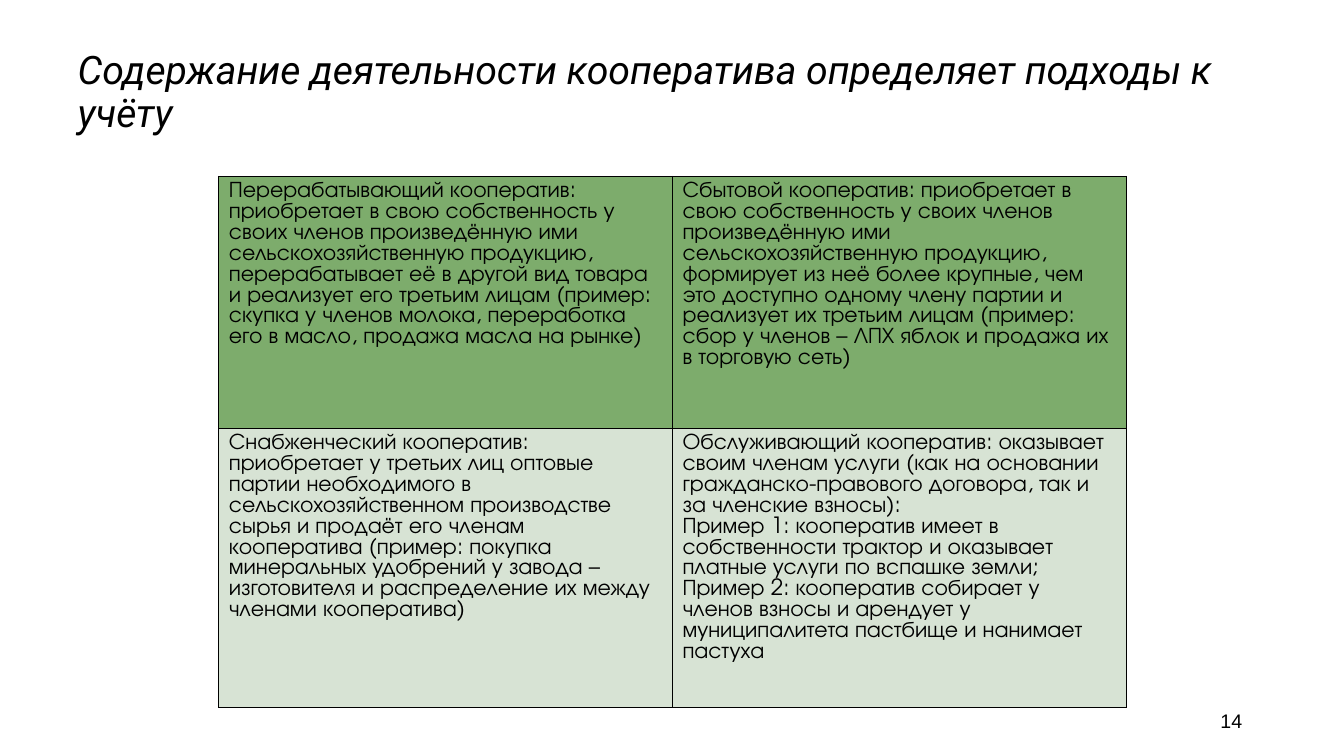
import pptx
import pptx.util
import pptx.dml.color
import pptx.enum.text
import pptx.oxml
import pptx.oxml.ns

Inches = pptx.util.Inches
Pt = pptx.util.Pt
Align = pptx.enum.text.PP_ALIGN
Anchor = pptx.enum.text.MSO_ANCHOR

COLORS = {"ink": "000000", "dark": "7DAC6C", "light": "D7E3D4"}


def style(para, face, size):
    para.font.name = face
    para.font.size = Pt(size)
    para.font.color.rgb = pptx.dml.color.RGBColor.from_string(COLORS["ink"])


def paint(cell, color):
    cell.fill.solid()
    cell.fill.fore_color.rgb = pptx.dml.color.RGBColor.from_string(color)
    props = cell._tc.get_or_add_tcPr()
    for spot, side in enumerate(("lnL", "lnR", "lnT", "lnB")):
        line = pptx.oxml.parse_xml(
            f'<a:{side} {pptx.oxml.ns.nsdecls("a")} w="12700"><a:solidFill>'
            f'<a:srgbClr val="{COLORS["ink"]}"/></a:solidFill></a:{side}>'
        )
        props.insert(spot, line)


deck = pptx.Presentation()
deck.slide_width = Inches(13.33)
deck.slide_height = Inches(7.5)
slide = deck.slides.add_slide(deck.slide_layouts[5])

title = slide.shapes.title
title.left, title.top = Inches(0.67), Inches(0.3)
title.width, title.height = Inches(12), Inches(1.25)
title.text_frame.text = "Содержание деятельности кооператива определяет подходы к учёту"
title.text_frame.vertical_anchor = Anchor.MIDDLE
head = title.text_frame.paragraphs[0]
head.alignment = Align.LEFT
head.line_spacing = 0.9
head.font.italic = True
style(head, "Roboto", 28)

rows = [
    ("dark", 2.5, [
        "Перерабатывающий кооператив: приобретает в свою собственность у своих членов "
        "произведённую ими сельскохозяйственную продукцию, перерабатывает её в другой вид "
        "товара и реализует его третьим лицам (пример: скупка у членов молока, переработка "
        "его в масло, продажа масла на рынке)",
        "Сбытовой кооператив: приобретает в свою собственность у своих членов произведённую "
        "ими сельскохозяйственную продукцию, формирует из неё более крупные, чем это доступно "
        "одному члену партии и реализует их третьим лицам (пример: сбор у членов – ЛПХ яблок "
        "и продажа их в торговую сеть)",
    ]),
    ("light", 2.77, [
        "Снабженческий кооператив: приобретает у третьих лиц оптовые партии необходимого в "
        "сельскохозяйственном производстве сырья и продаёт его членам кооператива (пример: "
        "покупка минеральных удобрений у завода – изготовителя и распределение их между "
        "членами кооператива)",
        "Обслуживающий кооператив: оказывает своим членам услуги (как на основании "
        "гражданско-правового договора, так и за членские взносы):\n"
        "Пример 1: кооператив имеет в собственности трактор и оказывает платные услуги по "
        "вспашке земли;\n"
        "Пример 2: кооператив собирает у членов взносы и арендует у муниципалитета пастбище "
        "и нанимает пастуха",
    ]),
]

frame = slide.shapes.add_table(2, 2, Inches(2.17), Inches(1.75), Inches(9), Inches(5.27))
table = frame.table
table.first_row = False
table.horz_banding = False
for column in table.columns:
    column.width = Inches(4.5)
for row, (shade, height, texts) in zip(table.rows, rows):
    row.height = Inches(height)
    for cell, text in zip(row.cells, texts):
        cell.text = text
        paint(cell, COLORS[shade])
        for para in cell.text_frame.paragraphs:
            style(para, "TeX Gyre Adventor", 16)

number = slide.shapes.add_textbox(Inches(9.42), Inches(6.95), Inches(3), Inches(0.4))
number.text_frame.word_wrap = True
number.text_frame.vertical_anchor = Anchor.MIDDLE
number.text_frame.text = "14"
page = number.text_frame.paragraphs[0]
page.alignment = Align.RIGHT
style(page, "Arial", 14)

deck.save("out.pptx")
